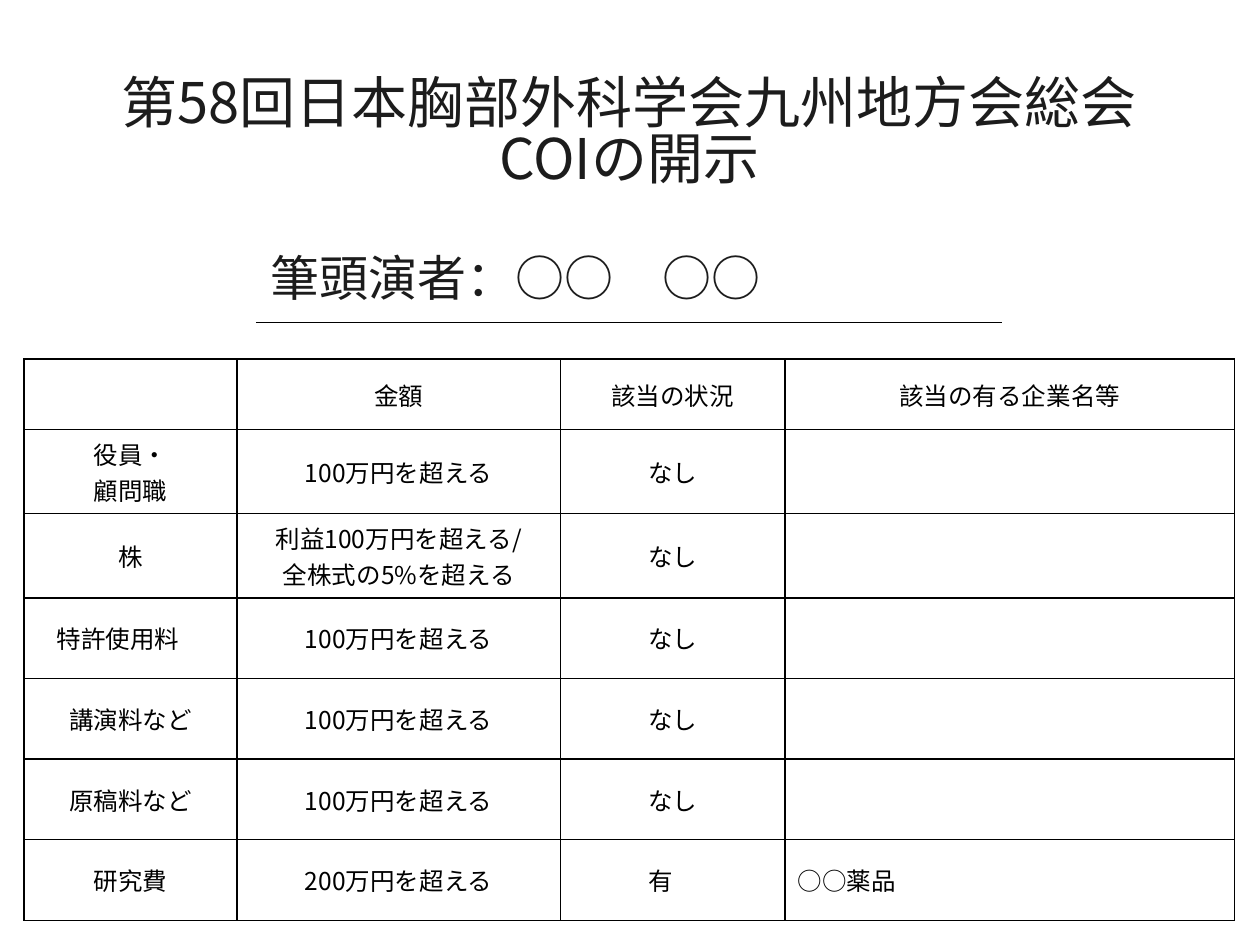
import lxml.etree
import pptx
import pptx.dml.color
import pptx.enum.shapes
import pptx.enum.text
import pptx.oxml.ns
import pptx.util

Inches = pptx.util.Inches
Pt = pptx.util.Pt
ALIGN = pptx.enum.text.PP_ALIGN
MIDDLE = pptx.enum.text.MSO_ANCHOR.MIDDLE
qn = pptx.oxml.ns.qn

FONT = "Noto Sans CJK JP"
INK = "1C1C1C"
BLACK = "000000"

COLUMNS = [1.69, 2.57, 1.78, 3.57]
ROWS = [0.56] + [0.64] * 6
DISCLOSURES = [
    ["", "金額", "該当の状況", "該当の有る企業名等"],
    ["役員・\n顧問職", "100万円を超える", "なし", ""],
    ["株", "利益100万円を超える/\n全株式の5%を超える", "なし", ""],
    ["特許使用料　", "100万円を超える", "なし", ""],
    ["講演料など", "100万円を超える", "なし", ""],
    ["原稿料など", "100万円を超える", "なし", ""],
    ["研究費", "200万円を超える", "有　", "○○薬品"],
]


def rgb(value):
    return pptx.dml.color.RGBColor.from_string(value)


def add_run(p, text, size, color):
    r = p.add_run()
    r.text = text
    r.font.size = Pt(size)
    r.font.name = FONT
    r.font.color.rgb = rgb(color)
    # East Asian glyphs take their typeface from a:ea
    ea = lxml.etree.SubElement(r.font._element, qn("a:ea"))
    ea.set("typeface", FONT)


def add_title(s, left, top, width, height):
    sp = s.shapes.title
    sp.left, sp.top, sp.width, sp.height = map(Inches, (left, top, width, height))
    tf = sp.text_frame
    tf.word_wrap = True
    tf.vertical_anchor = MIDDLE
    for i, line in enumerate(["第58回日本胸部外科学会九州地方会総会", "COIの開示"]):
        p = tf.add_paragraph() if i else tf.paragraphs[0]
        p.alignment = ALIGN.CENTER
        p.line_spacing = 0.84
        add_run(p, line, 32, INK)


def add_speaker(s, left, top, width, height):
    """Speaker's name with a rule underneath."""
    sp = s.shapes.add_textbox(*map(Inches, (left, top, width, height)))
    tf = sp.text_frame
    tf.word_wrap = True
    tf.vertical_anchor = MIDDLE
    p = tf.paragraphs[0]
    p.line_spacing = 0.84
    add_run(p, "筆頭演者：○○　○○", 28, INK)

    y = Inches(top + height + 0.04)
    rule = s.shapes.add_connector(
        pptx.enum.shapes.MSO_CONNECTOR.STRAIGHT,
        Inches(left - 0.02), y, Inches(left + width - 0.04), y)
    rule.line.color.rgb = rgb(BLACK)
    rule.line.width = Pt(1)
    lxml.etree.SubElement(rule._element.spPr, qn("a:effectLst"))


def set_borders(cell, color, width):
    tcPr = cell._tc.get_or_add_tcPr()
    for i, side in enumerate(["a:lnL", "a:lnR", "a:lnT", "a:lnB"]):
        ln = lxml.etree.Element(qn(side), w=str(Pt(width)))
        fill = lxml.etree.SubElement(ln, qn("a:solidFill"))
        lxml.etree.SubElement(fill, qn("a:srgbClr"), val=color)
        tcPr.insert(i, ln)


def fill_cell(cell, text, align):
    cell.fill.background()
    cell.vertical_anchor = MIDDLE
    set_borders(cell, BLACK, 1)
    p = cell.text_frame.paragraphs[0]
    p.alignment = align
    for i, line in enumerate(text.split("\n") if text else []):
        if i:
            p.add_line_break()
        add_run(p, line, 14, BLACK)


def add_disclosure_table(s, left, top):
    table = s.shapes.add_table(
        len(ROWS), len(COLUMNS), Inches(left), Inches(top),
        Inches(sum(COLUMNS)), Inches(sum(ROWS))).table
    table.horz_banding = False
    for column, width in zip(table.columns, COLUMNS):
        column.width = Inches(width)
    for row, height, texts in zip(table.rows, ROWS, DISCLOSURES):
        row.height = Inches(height)
        for i, (cell, text) in enumerate(zip(row.cells, texts)):
            is_company = i == 3 and texts is not DISCLOSURES[0]
            fill_cell(cell, text, ALIGN.LEFT if is_company else ALIGN.CENTER)
    table.first_row = False


def main():
    prs = pptx.Presentation()
    prs.slide_width, prs.slide_height = Inches(10), Inches(7.5)
    s = prs.slides.add_slide(prs.slide_layouts[5])
    add_disclosure_table(s, 0.19, 2.85)
    add_speaker(s, 2.05, 1.95, 5.94, 0.57)
    add_title(s, 0.49, 0.48, 9.01, 1.18)
    prs.save("out.pptx")


if __name__ == "__main__":
    main()
